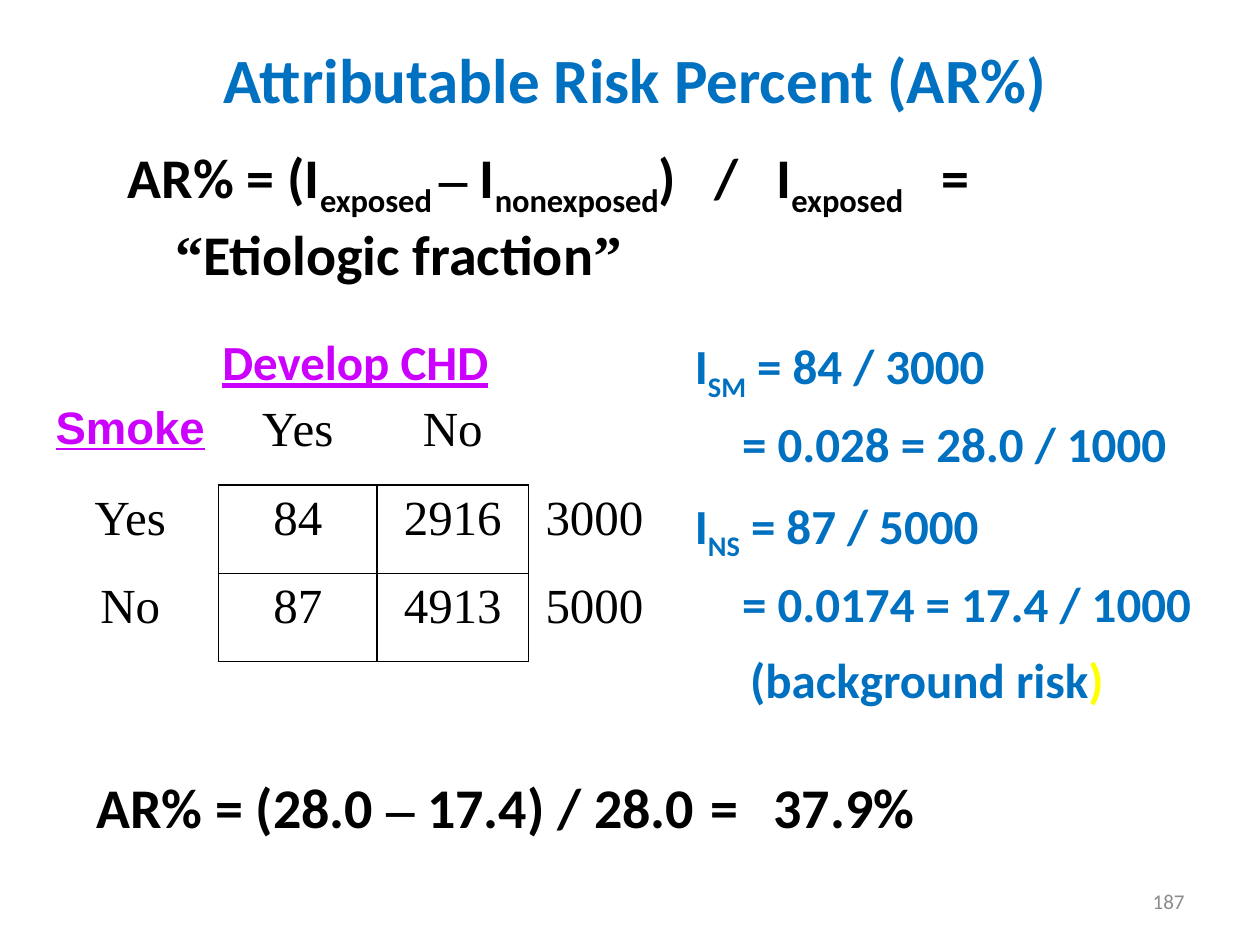
from lxml import etree
from pptx import Presentation
from pptx.dml.color import RGBColor
from pptx.enum.text import MSO_ANCHOR, PP_ALIGN
from pptx.oxml.ns import qn
from pptx.util import Pt

LEFT, CENTER, RIGHT = PP_ALIGN.LEFT, PP_ALIGN.CENTER, PP_ALIGN.RIGHT
TOP, MIDDLE = MSO_ANCHOR.TOP, MSO_ANCHOR.MIDDLE
BLACK = RGBColor(0, 0, 0)
BLUE = RGBColor(0x00, 0x70, 0xC0)
PURPLE = RGBColor(0xCC, 0x00, 0xFF)
YELLOW = RGBColor(0xFF, 0xFF, 0x00)
GRAY = RGBColor(0x8C, 0x8C, 0x8C)
SERIF = "Times New Roman"
HANGING = 27

# Content: a paragraph is a list of (text, format changes)
SUB = {"subscript": True}
TIMES = {"font": SERIF}
TITLE = [[("Attributable Risk Percent (AR%)", {})]]
PAGE_NUMBER = [[("187", {})]]
DEFINITION = [[
    ("AR% = (I", {}), ("exposed ", SUB), ("–", TIMES), (" I", {}),
    ("nonexposed", SUB), (")   /   I", {}), ("exposed", SUB), ("   = ", {}),
    ("“", TIMES), ("Etiologic fraction", {}), ("”", TIMES),
]]
OUTCOME = [[("Develop CHD", {})]]
RESULT = [[("AR% = (28.0 ", {}), ("–", TIMES), (" 17.4) / 28.0\t=\t37.9%", {})]]
INCIDENCES = [
    [("I", {}), ("SM", SUB), (" = 84 / 3000", {})],
    [("\t= 0.028 = 28.0 / 1000", {})],
    [("I", {}), ("NS", SUB), (" = 87 / 5000", {})],
    [("\t= 0.0174 = 17.4 / 1000", {})],
    [("     (background risk", {}), (")", {"color": YELLOW})],
]
COUNTS = [
    ["Smoke", "Yes", "No", ""],
    ["Yes", "84", "2916", "3000"],
    ["No", "87", "4913", "5000"],
]
COLUMN_WIDTHS = [100.8, 90.7, 86.4, 75.6]
ROW_HEIGHT = 50.4
BOXED = {(row, column) for row in (1, 2) for column in (1, 2)}
SIDES = {"a:lnL": (0, -1), "a:lnR": (0, 1), "a:lnT": (-1, 0), "a:lnB": (1, 0)}


def write_text(frame, paragraphs, size=28, color=BLACK, font="Calibri", bold=True,
               underline=False, align=LEFT, hanging=0, line_spacing=None):
    for index, runs in enumerate(paragraphs):
        paragraph = frame.add_paragraph() if index else frame.paragraphs[0]
        paragraph.alignment = align
        if line_spacing:
            paragraph.line_spacing = line_spacing
        if index:
            paragraph.space_before = Pt(0.6 * size)
        if hanging:
            properties = paragraph._p.get_or_add_pPr()
            properties.set("marL", str(Pt(hanging)))
            properties.set("indent", str(-Pt(hanging)))
        for text, changes in runs:
            run = paragraph.add_run()
            run.text = text
            run.font.size = Pt(size)
            run.font.name = changes.get("font", font)
            run.font.bold = bold
            run.font.underline = underline
            run.font.color.rgb = changes.get("color", color)
            if changes.get("subscript"):
                run.font._element.set("baseline", "-25000")


def add_text(slide, box, paragraphs, anchor=TOP, **text_format):
    frame = slide.shapes.add_textbox(*map(Pt, box)).text_frame
    frame.word_wrap = True
    frame.vertical_anchor = anchor
    write_text(frame, paragraphs, **text_format)


def set_borders(cell, row, column):
    """Draw each side that touches a boxed cell and clear the others."""
    properties = cell._tc.get_or_add_tcPr()
    for position, (tag, (down, across)) in enumerate(SIDES.items()):
        line = etree.Element(qn(tag), w=str(Pt(1)))
        if BOXED & {(row, column), (row + down, column + across)}:
            fill = etree.SubElement(line, qn("a:solidFill"))
            etree.SubElement(fill, qn("a:srgbClr"), val=str(BLACK))
        else:
            etree.SubElement(line, qn("a:noFill"))
        properties.insert(position, line)


def add_counts_table(slide, left, top):
    table = slide.shapes.add_table(
        len(COUNTS), len(COLUMN_WIDTHS), Pt(left), Pt(top),
        Pt(sum(COLUMN_WIDTHS)), Pt(ROW_HEIGHT * len(COUNTS))).table
    table.first_row = table.horz_banding = False
    for column, width in enumerate(COLUMN_WIDTHS):
        table.columns[column].width = Pt(width)
    for row, values in enumerate(COUNTS):
        table.rows[row].height = Pt(ROW_HEIGHT)
        for column, value in enumerate(values):
            cell = table.cell(row, column)
            cell.fill.background()
            set_borders(cell, row, column)
            if value == "Smoke":
                look = dict(size=26, font="Arial", color=PURPLE, underline=True)
            else:
                look = dict(font=SERIF, bold=False)
            write_text(cell.text_frame, [[(value, {})]], align=CENTER, **look)


def main():
    presentation = Presentation()
    presentation.slide_width, presentation.slide_height = Pt(720), Pt(540)
    slide = presentation.slides.add_slide(presentation.slide_layouts[6])

    # Title and page number
    add_text(slide, (60, 12, 606, 66), TITLE, anchor=MIDDLE, size=36, color=BLUE,
             align=CENTER)
    add_text(slide, (516, 500.5, 168, 28.8), PAGE_NUMBER, anchor=MIDDLE, size=12,
             color=GRAY, bold=False, align=RIGHT)

    # Definition
    add_text(slide, (66, 78, 569.5, 78), DEFINITION, size=32, hanging=HANGING)

    # Two-by-two table with its heading
    add_counts_table(slide, 24, 226.8)
    add_text(slide, (120, 186, 210, 54), OUTCOME, color=PURPLE, underline=True,
             hanging=HANGING)

    # Result and incidences
    add_text(slide, (48, 438, 642, 54), RESULT, size=32, hanging=HANGING)
    add_text(slide, (390, 192, 354, 240), INCIDENCES, color=BLUE, hanging=HANGING,
             line_spacing=0.8)

    presentation.save("out.pptx")


if __name__ == "__main__":
    main()
